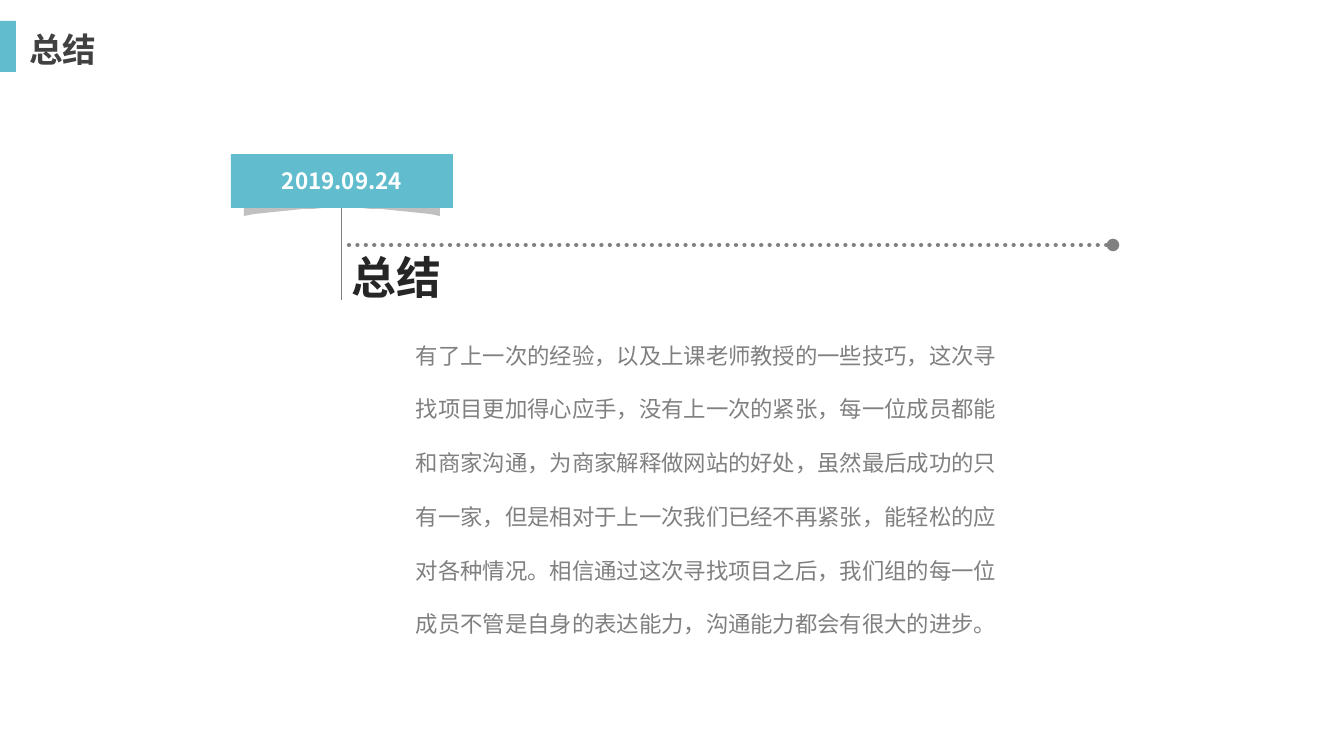
"""Build the summary slide with its dated ribbon and closing text."""
from dataclasses import dataclass

from lxml import etree
from pptx import Presentation
from pptx import util as u
from pptx.dml.color import RGBColor
from pptx.enum import dml, shapes, text
from pptx.oxml import ns

PX = 914400 / 100.8


@dataclass(frozen=True)
class Theme:
    face: str = "Noto Sans CJK SC"
    accent: str = "61BDCD"
    shade: str = "C0C0C0"
    gray: str = "808080"
    dark: str = "262626"
    title: str = "414141"
    white: str = "FFFFFF"
    body_size: int = 16
    title_size: int = 24
    heading_size: int = 32


def emu(*lengths):
    return [u.Emu(round(length * PX)) for length in lengths]


def apply(target, values):
    for name, value in values.items():
        setattr(target, name, value)


class SlideBuilder:
    def __init__(self, deck, theme):
        self.theme = theme
        self.page = deck.slides.add_slide(deck.slide_layouts[5])

    def fill_text(self, box, words, size, color, bold=False, wrap=True, spacing=None,
                  align=text.PP_ALIGN.LEFT, anchor=text.MSO_ANCHOR.TOP):
        frame = box.text_frame
        apply(frame, {"word_wrap": wrap, "vertical_anchor": anchor,
                      "auto_size": text.MSO_AUTO_SIZE.NONE})
        para = frame.paragraphs[0]
        apply(para, {"alignment": align, "line_spacing": spacing})
        span = para.add_run()
        span.text = words
        span.font.color.rgb = RGBColor.from_string(color)
        apply(span.font, {"size": u.Pt(size), "bold": bold, "name": self.theme.face})
        east = etree.SubElement(span._r.get_or_add_rPr(), ns.qn("a:ea"))
        east.set("typeface", self.theme.face)

    def title(self, area, words):
        box = self.page.shapes.title
        apply(box, dict(zip(("left", "top", "width", "height"), emu(*area))))
        self.fill_text(box, words, self.theme.title_size, self.theme.title, bold=True)

    def label(self, area, words, size, color, **style):
        box = self.page.shapes.add_textbox(*emu(*area))
        self.fill_text(box, words, size, color, **style)

    def paint(self, box, color):
        box.shadow.inherit = False
        box.fill.solid()
        box.fill.fore_color.rgb = RGBColor.from_string(color)
        box.line.fill.background()
        return box

    def block(self, area, color):
        box = self.page.shapes.add_shape(shapes.MSO_SHAPE.RECTANGLE, *emu(*area))
        return self.paint(box, color)

    def outline(self, points, color):
        builder = self.page.shapes.build_freeform(*points[0], scale=PX)
        builder.add_line_segments(points[1:], close=True)
        return self.paint(builder.convert_to_shape(), color)

    def line(self, start, end, width, source=None, dotted=False):
        wire = self.page.shapes.add_connector(
            shapes.MSO_CONNECTOR.STRAIGHT, *emu(*start, *end))
        wire.line.color.rgb = RGBColor.from_string(self.theme.gray)
        wire.line.width = u.Pt(width)
        if source is not None:
            wire.begin_connect(source, 2)
        outline = wire._element.spPr
        if dotted:
            wire.line.dash_style = dml.MSO_LINE.ROUND_DOT
            stroke = outline.find(ns.qn("a:ln"))
            stroke.set("cap", "rnd")
            etree.SubElement(stroke, ns.qn("a:tailEnd")).set("type", "oval")
        etree.SubElement(outline, ns.qn("a:effectLst"))


def main():
    deck = Presentation()
    deck.slide_width, deck.slide_height = emu(1344, 756)
    theme = Theme()
    slide = SlideBuilder(deck, theme)

    center, reach, steps = 342, 98, 10
    curve = [(center + reach * step / steps, 208 + 8 * (step / steps) ** 2)
             for step in range(steps, -steps - 1, -1)]
    slide.outline(curve + [(center - reach, 196), (center, 190),
                           (center + reach, 196)], theme.shade)

    ribbon = slide.block((231, 154, 222, 54), theme.accent)
    slide.fill_text(ribbon, "2019.09.24", theme.body_size, theme.white, bold=True,
                    wrap=False, align=text.PP_ALIGN.CENTER,
                    anchor=text.MSO_ANCHOR.MIDDLE)
    slide.line((center, 208), (center, 300), 0.75, source=ribbon)
    slide.line((349, 245), (1113, 245), 3, dotted=True)

    slide.label(
        (406, 310, 603, 342),
        "有了上一次的经验，以及上课老师教授的一些技巧，这次寻找项目更加得心应手，"
        "没有上一次的紧张，每一位成员都能和商家沟通，为商家解释做网站的好处，"
        "虽然最后成功的只有一家，但是相对于上一次我们已经不再紧张，"
        "能轻松的应对各种情况。相信通过这次寻找项目之后，"
        "我们组的每一位成员不管是自身的表达能力，沟通能力都会有很大的进步。",
        theme.body_size, theme.gray, spacing=2.0)
    slide.label((center, 245, 242, 38), "总结", theme.heading_size, theme.dark,
                bold=True, wrap=False)
    slide.title((19, 24, 291, 50), "总结")
    slide.block((0, 21, 16, 51), theme.accent)
    deck.save("out.pptx")


if __name__ == "__main__":
    main()
